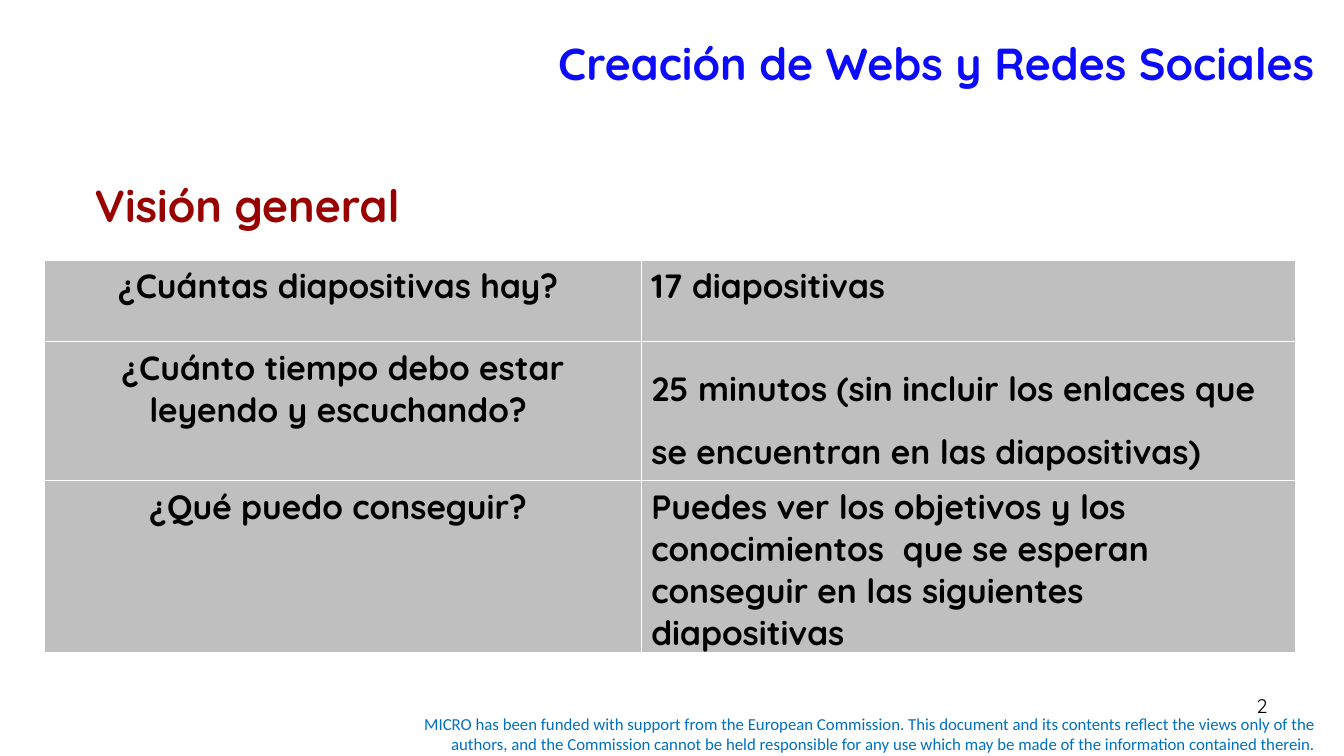
from dataclasses import dataclass

from lxml import etree
from pptx import Presentation
from pptx import util as u
from pptx.dml.color import RGBColor
from pptx.enum import text
from pptx.oxml.ns import qn


@dataclass(frozen=True)
class Theme:
    heading_font: str = "Quicksand"
    notice_font: str = "Calibri"
    blue: str = "0B0AFD"
    red: str = "990000"
    notice_blue: str = "0070C0"
    black: str = "000000"
    cell_grey: str = "BFBFBF"
    white: str = "FFFFFF"
    heading_size: int = 32
    table_size: int = 24
    number_size: int = 14
    notice_size: int = 12


THEME = Theme()
LEFT, CENTER, RIGHT = (text.PP_ALIGN.LEFT, text.PP_ALIGN.CENTER,
                       text.PP_ALIGN.RIGHT)

COLUMN_WIDTHS = (5.92, 6.49)
ROW_HEIGHTS = (0.81, 1.38, 1.5)
# The space closing each question shifts its centred line
OVERVIEW = (
    ("¿Cuántas diapositivas hay? ", "17 diapositivas"),
    ("¿Cuánto tiempo debo estar leyendo y escuchando? ",
     "25 minutos (sin incluir los enlaces que se encuentran en las diapositivas)"),
    ("¿Qué puedo conseguir? ",
     "Puedes ver los objetivos y los conocimientos  que se esperan conseguir "
     "en las siguientes diapositivas"),
)
NOTICE = (
    "MICRO has been funded with support from the European Commission. This "
    "document and its contents reflect the views only of the authors, and the "
    "Commission cannot be held responsible for any use which may be made of the "
    "information contained therein."
)


def write(frame, words, size, color, font=THEME.heading_font, bold=False,
          align=LEFT):
    """Fill a text frame with one formatted paragraph."""
    frame.word_wrap = True
    paragraph = frame.paragraphs[0]
    paragraph.text = words
    paragraph.alignment = align
    paragraph.font.name = font
    paragraph.font.size = u.Pt(size)
    paragraph.font.bold = bold
    paragraph.font.color.rgb = RGBColor.from_string(color)
    return paragraph


def add_label(slide, box, words, size, color, anchor=text.MSO_ANCHOR.TOP,
              **style):
    label = slide.shapes.add_textbox(*map(u.Inches, box))
    label.text_frame.vertical_anchor = anchor
    write(label.text_frame, words, size, color, **style)


def set_title(slide, box, words):
    title = slide.shapes.title
    title.left, title.top, title.width, title.height = map(u.Inches, box)
    title.text_frame.vertical_anchor = text.MSO_ANCHOR.MIDDLE
    write(title.text_frame, words, THEME.heading_size, THEME.blue,
          bold=True, align=RIGHT)


def style_cell(cell):
    """Give a cell thin white borders and a grey fill."""
    properties = cell._tc.get_or_add_tcPr()
    for side in ("a:lnL", "a:lnR", "a:lnT", "a:lnB"):
        border = etree.SubElement(properties, qn(side), w=str(u.Pt(1)))
        fill = etree.SubElement(border, qn("a:solidFill"))
        etree.SubElement(fill, qn("a:srgbClr"), val=THEME.white)
    cell.fill.solid()
    cell.fill.fore_color.rgb = RGBColor.from_string(THEME.cell_grey)


def add_overview_table(slide, left, top):
    overview = slide.shapes.add_table(
        len(ROW_HEIGHTS), len(COLUMN_WIDTHS), u.Inches(left), u.Inches(top),
        u.Inches(sum(COLUMN_WIDTHS)), u.Inches(sum(ROW_HEIGHTS))).table
    for column, width in zip(overview.columns, COLUMN_WIDTHS):
        column.width = u.Inches(width)
    for row, height in zip(overview.rows, ROW_HEIGHTS):
        row.height = u.Inches(height)
    for row, entries in zip(overview.rows, OVERVIEW):
        for cell, words, align in zip(row.cells, entries, (CENTER, LEFT)):
            style_cell(cell)
            write(cell.text_frame, words, THEME.table_size, THEME.black,
                  bold=True, align=align)
    # The reading time is set with wider lines
    overview.cell(1, 1).text_frame.paragraphs[0].line_spacing = 1.5


def main():
    deck = Presentation()
    deck.slide_width, deck.slide_height = u.Inches(13.33), u.Inches(7.5)
    slide = deck.slides.add_slide(deck.slide_layouts.get_by_name("Title Only"))

    # Funding notice
    add_label(slide, (3.75, 7.03, 9.4, 0.5), NOTICE, THEME.notice_size,
              THEME.notice_blue, anchor=text.MSO_ANCHOR.MIDDLE,
              font=THEME.notice_font, align=RIGHT)

    # Overview questions and answers
    add_overview_table(slide, 0.44, 2.58)

    # Slide number
    add_label(slide, (9.56, 6.83, 3.11, 0.52), "2", THEME.number_size,
              THEME.black, align=RIGHT)

    # Headings
    add_label(slide, (0.84, 1.71, 3.85, 0.64), "Visión general",
              THEME.heading_size, THEME.red, bold=True)
    set_title(slide, (1.14, 0, 12, 1.25), "Creación de Webs y Redes Sociales")

    deck.save("out.pptx")


if __name__ == "__main__":
    main()
